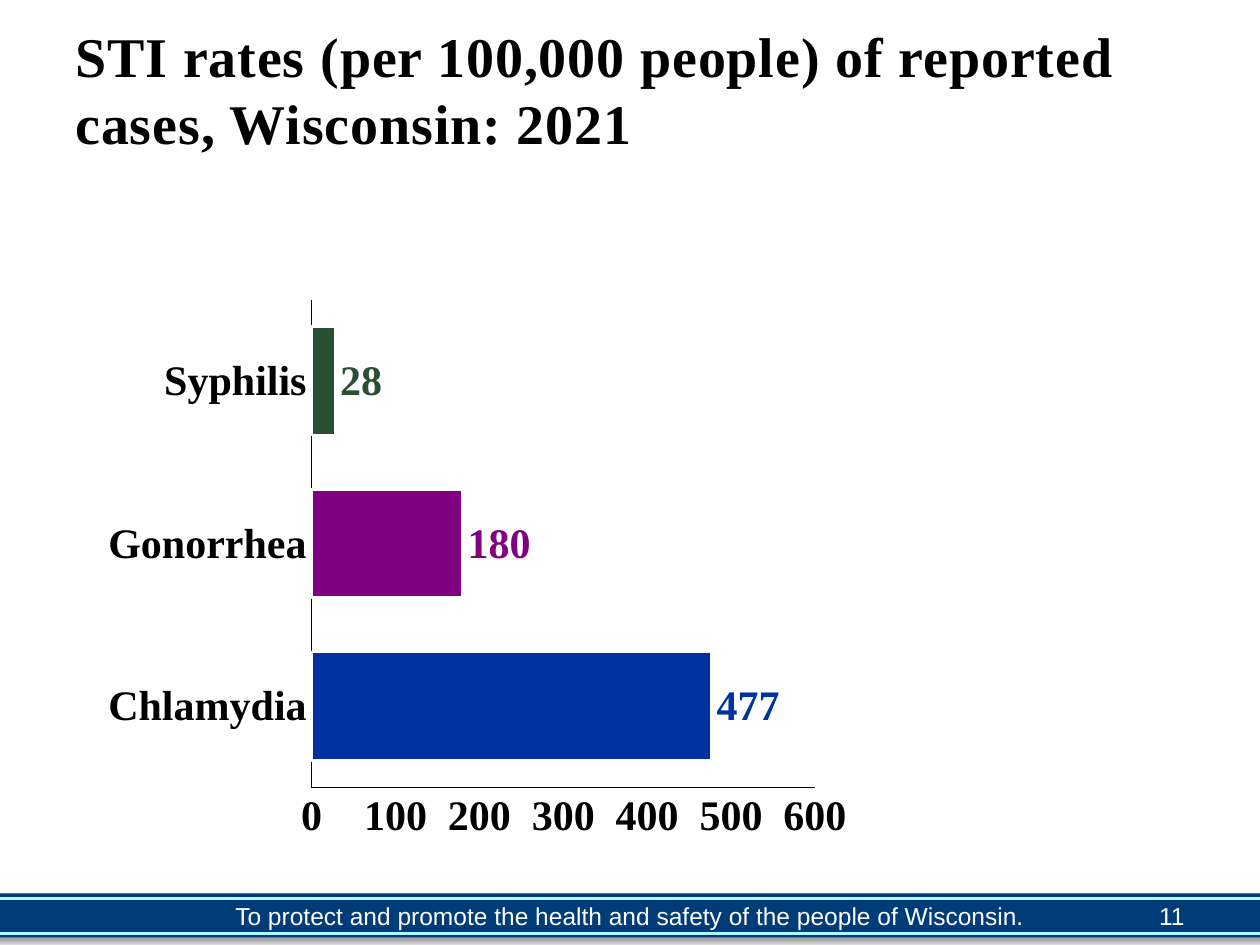
from dataclasses import dataclass

from lxml.etree import SubElement
from pptx import Presentation
from pptx.chart.data import CategoryChartData
from pptx.dml.color import RGBColor as RGB
from pptx.enum.chart import XL_CHART_TYPE as ChartType
from pptx.enum.chart import XL_LABEL_POSITION as LabelPosition
from pptx.enum.chart import XL_TICK_MARK as TickMark
from pptx.enum.shapes import MSO_CONNECTOR as Connector
from pptx.enum.shapes import MSO_SHAPE as Shape
from pptx.enum.text import MSO_ANCHOR as Anchor
from pptx.enum.text import PP_ALIGN as Align
from pptx.oxml import parse_xml
from pptx.oxml.ns import nsdecls, qn
from pptx.util import Pt


@dataclass(frozen=True)
class Theme:
    band: str = "003D78"
    rule: str = "B0FAFF"
    ink: str = "000000"
    paper: str = "FFFFFF"
    serif: str = "Times New Roman"
    sans: str = "Arial"
    title_size: float = 32
    chart_size: float = 24
    footer_size: float = 14


THEME = Theme()
RATES = [  # disease, rate, bar colour
    ("Chlamydia", 477, "0033A1"),
    ("Gonorrhea", 180, "800080"),
    ("Syphilis", 28, "2A5034"),
]
BLEED_LEFT, BLEED_WIDTH = -7.2, 734.4


def color(value):
    return RGB.from_string(value)


def style_font(font, name, size, ink, bold=False):
    font.name, font.size, font.bold = name, Pt(size), bold
    font.color.rgb = color(ink)


def add_text(page, text, left, top, width, height, *, font, size, ink,
             bold=False, align=Align.LEFT, spacing=0):
    box = page.shapes.add_textbox(Pt(left), Pt(top), Pt(width), Pt(height))
    frame = box.text_frame
    frame.word_wrap = True
    frame.vertical_anchor = Anchor.MIDDLE
    para = frame.paragraphs[0]
    para.alignment = align
    span = para.add_run()
    span.text = text
    style_font(span.font, font, size, ink, bold)
    if spacing:
        span.font._element.set("spc", str(int(spacing * 100)))


def add_band(page, top, height):
    """Add the footer band with its soft shadow."""
    band = page.shapes.add_shape(
        Shape.RECTANGLE, Pt(BLEED_LEFT), Pt(top), Pt(BLEED_WIDTH), Pt(height))
    band.fill.solid()
    band.fill.fore_color.rgb = color(THEME.band)
    band.line.fill.background()
    band._element.spPr.append(parse_xml(
        f'<a:effectLst {nsdecls("a")}>'
        f'<a:outerShdw blurRad="{Pt(4)}" dist="{Pt(3)}" dir="2700000" rotWithShape="0">'
        f'<a:srgbClr val="{THEME.ink}"><a:alpha val="40000"/></a:srgbClr>'
        '</a:outerShdw></a:effectLst>'))


def add_rule(page, y):
    rule = page.shapes.add_connector(
        Connector.STRAIGHT, Pt(BLEED_LEFT), Pt(y), Pt(BLEED_LEFT + BLEED_WIDTH), Pt(y))
    rule.line.color.rgb = color(THEME.rule)
    rule.line.width = Pt(1.5)
    SubElement(rule._element.spPr, qn("a:effectLst"))


def style_axis(axis):
    axis.has_major_gridlines = False
    axis.major_tick_mark = axis.minor_tick_mark = TickMark.NONE
    axis.format.line.color.rgb = color(THEME.ink)
    axis.format.line.width = Pt(0.75)
    style_font(axis.tick_labels.font, THEME.serif, THEME.chart_size, THEME.ink, True)


def set_plot_area(chart, x, y, width, height):
    """Fix the inner plot area, in fractions of the chart."""
    area = chart._chartSpace.chart.plotArea
    for old in area.findall(qn("c:layout")):
        area.remove(old)
    places = "".join(f'<c:{tag} val="{value}"/>' for tag, value in
                     (("x", x), ("y", y), ("w", width), ("h", height)))
    area.insert(0, parse_xml(
        f'<c:layout {nsdecls("c")}><c:manualLayout><c:layoutTarget val="inner"/>'
        f'<c:xMode val="edge"/><c:yMode val="edge"/>{places}'
        '</c:manualLayout></c:layout>'))


def add_rate_chart(page, left, top, width, height):
    names, rates, inks = zip(*RATES)
    data = CategoryChartData()
    data.categories = names
    data.add_series("Series 1", rates)
    chart = page.shapes.add_chart(
        ChartType.BAR_CLUSTERED, Pt(left), Pt(top), Pt(width), Pt(height), data).chart
    chart.has_legend = chart.has_title = False
    style_font(chart.font, THEME.sans, 10, THEME.paper)
    style_axis(chart.category_axis)
    style_axis(chart.value_axis)
    chart.value_axis.minimum_scale = 0
    chart.value_axis.maximum_scale = 600
    chart.value_axis.major_unit = 100
    set_plot_area(chart, 0.22, 0.17, 0.51, 0.75)

    plot = chart.plots[0]
    plot.gap_width = 50
    plot.vary_by_categories = False
    series = plot.series[0]
    for index, ink in enumerate(inks):
        point = series.points[index]
        point.format.fill.solid()
        point.format.fill.fore_color.rgb = color(ink)
        point.format.line.color.rgb = color(THEME.paper)
        point.format.line.width = Pt(1.5)
        label = point.data_label
        style_font(label.font, THEME.serif, THEME.chart_size, ink, True)
        label.position = LabelPosition.OUTSIDE_END


def main():
    deck = Presentation()
    deck.slide_width, deck.slide_height = Pt(720), Pt(540)
    page = deck.slides.add_slide(deck.slide_layouts[6])
    footer = dict(font=THEME.sans, size=THEME.footer_size, ink=THEME.paper)

    add_band(page, 510.5, 25.2)
    add_text(page, "To protect and promote the health and safety of the people of Wisconsin.",
             -6, 516, 732, 15, align=Align.CENTER, **footer)
    for y in (513.4, 533.5):
        add_rule(page, y)
    add_text(page, "STI rates (per 100,000 people) of reported cases, Wisconsin: 2021",
             36, 18, 648, 65, font=THEME.serif, size=THEME.title_size,
             ink=THEME.ink, bold=True, spacing=0.5)
    add_text(page, "11", 516, 509, 168, 29, align=Align.RIGHT, **footer)
    add_rate_chart(page, 54, 108, 564, 372)
    deck.save("out.pptx")


if __name__ == "__main__":
    main()
